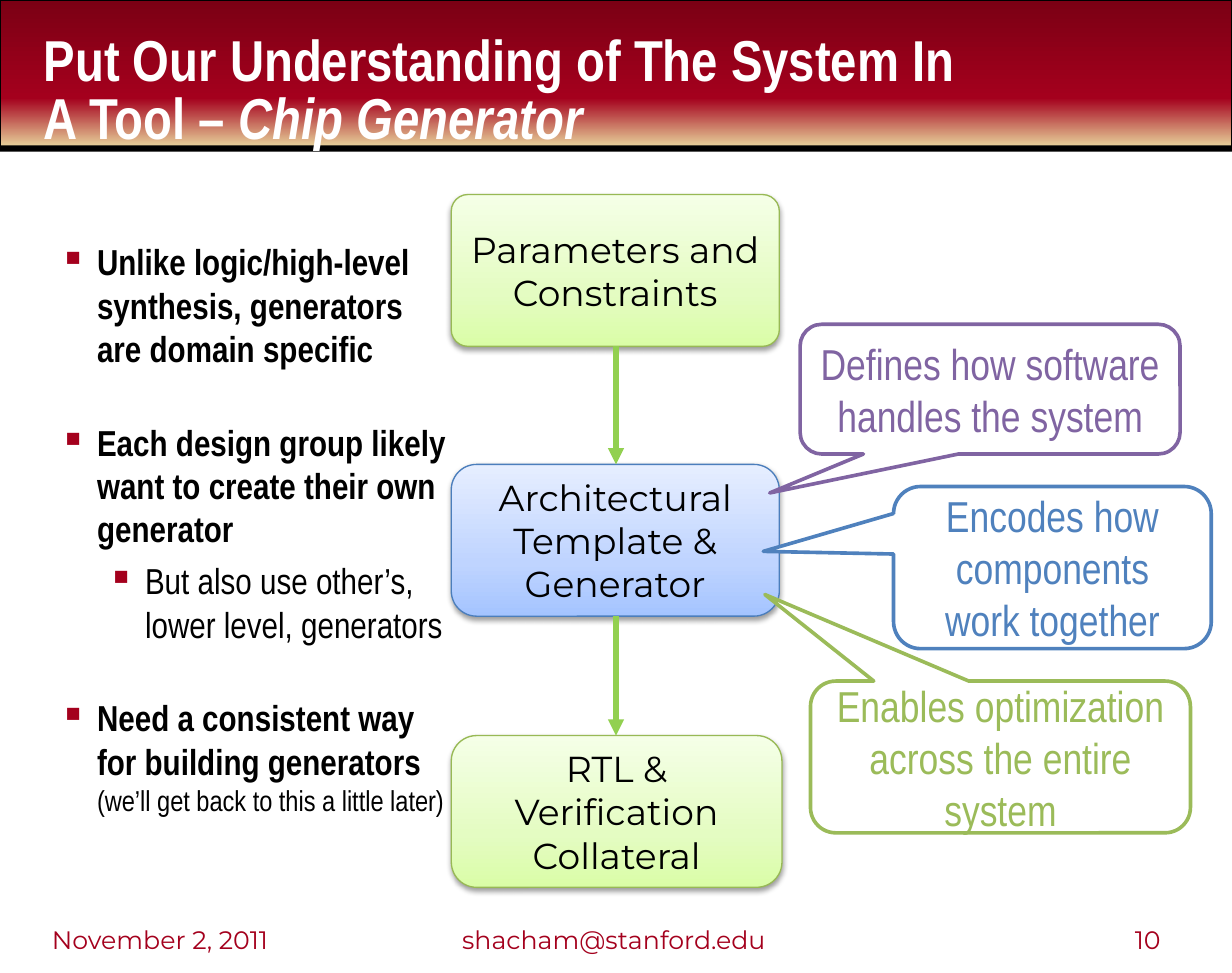
from copy import deepcopy
from dataclasses import dataclass

from pptx import Presentation
from pptx.dml.color import RGBColor
from pptx.enum.shapes import MSO_CONNECTOR as Connector, MSO_SHAPE as Shape
from pptx.enum.text import MSO_ANCHOR as Anchor, PP_ALIGN as Align
from pptx.oxml.ns import qn
from pptx.oxml.xmlchemy import OxmlElement as new_element
from pptx.util import Emu, Inches, Pt


@dataclass(frozen=True)
class Theme:
    narrow: str = "Arial Narrow"
    wide: str = "Montserrat"
    black: str = "000000"
    white: str = "FFFFFF"
    crimson: str = "A4001D"
    arrow: str = "92D050"
    purple: str = "8064A2"
    blue: str = "4F81BD"
    olive: str = "9BBB59"
    green_edge: str = "98B955"
    blue_edge: str = "4B7EBC"
    header_stops: tuple = ((0, "7B0014"), (0.67, "A4001D"), (1, "E7D19A"))
    green_stops: tuple = ((0, "DAFDA7"), (0.35, "E4FCC2"), (1, "F5FFE7"))
    blue_stops: tuple = ((0, "A4C4FF"), (0.35, "BFD4FF"), (1, "E6EEFF"))
    title: int = 32
    callout: int = 24
    body: int = 20
    note: int = 16
    footer: int = 14


def add_child(parent, tag, **attributes):
    child = new_element(tag)
    for name, value in attributes.items():
        child.set(name, str(value))
    parent.append(child)
    return child


def add_shadow(effects, blur, distance, angle, opacity):
    shadow = add_child(effects, "a:outerShdw", blurRad=Pt(blur), dist=Pt(distance),
                       dir=angle * 60000, algn="ctr", rotWithShape=0)
    color = add_child(shadow, "a:srgbClr", val="000000")
    add_child(color, "a:alpha", val=opacity * 1000)


class SlideBuilder:
    def __init__(self, page, theme):
        self.page = page
        self.theme = theme

    def style(self, span, font, size, color, bold=False, italic=False):
        span.font.name = font
        span.font.size = Pt(size)
        span.font.bold = bold
        span.font.italic = italic
        span.font.color.rgb = RGBColor.from_string(color)

    def shape(self, kind, place, fill, line=None, width=0.75, angle=90, adjust=()):
        shape = self.page.shapes.add_shape(kind, *map(Inches, place))
        shape.shadow.inherit = False
        for index, value in enumerate(adjust):
            shape.adjustments[index] = value
        if isinstance(fill, str):
            shape.fill.solid()
            shape.fill.fore_color.rgb = RGBColor.from_string(fill)
        else:
            shape.fill.gradient()
            shape.fill.gradient_angle = angle
            stop_list = shape.element.spPr.find(".//" + qn("a:gsLst"))
            stop_list.append(deepcopy(stop_list[0]))
            for stop, (position, color) in zip(shape.fill.gradient_stops, fill):
                stop.position = position
                stop.color.rgb = RGBColor.from_string(color)
        if line:
            shape.line.color.rgb = RGBColor.from_string(line)
            shape.line.width = Pt(width)
        else:
            shape.line.fill.background()
        return shape

    def label(self, shape, text, font, size, color):
        frame = shape.text_frame
        frame.word_wrap = True
        frame.vertical_anchor = Anchor.MIDDLE
        frame.text = text
        para = frame.paragraphs[0]
        para.alignment = Align.CENTER
        self.style(para.runs[0], font, size, color)
        return frame

    def stage(self, place, text, fill, edge, corner):
        shape = self.shape(Shape.ROUNDED_RECTANGLE, place, fill, edge, adjust=(corner,))
        add_shadow(shape.element.spPr.find(qn("a:effectLst")), 3.1, 1.6, 90, 38)
        frame = self.label(shape, text, self.theme.wide, self.theme.body, self.theme.black)
        frame.margin_left = frame.margin_right = Inches(0.05)

    def callout(self, place, text, color, pointer):
        shape = self.shape(Shape.ROUNDED_RECTANGULAR_CALLOUT, place, self.theme.white,
                           color, 2, adjust=(*pointer, 0.167))
        self.label(shape, text, self.theme.narrow, self.theme.callout, color)

    def arrow(self, x, top, bottom):
        link = self.page.shapes.add_connector(
            Connector.STRAIGHT, Inches(x), Inches(top), Inches(x), Inches(bottom))
        link.line.color.rgb = RGBColor.from_string(self.theme.arrow)
        link.line.width = Pt(3)
        add_child(link.line._get_or_add_ln(), "a:tailEnd", type="triangle")
        add_child(link.element.spPr, "a:effectLst")

    def text_box(self, place, anchor, margins):
        box = self.page.shapes.add_textbox(*map(Inches, place))
        frame = box.text_frame
        frame.word_wrap = True
        frame.vertical_anchor = anchor
        frame.margin_left = frame.margin_right = Inches(margins[0])
        frame.margin_top = frame.margin_bottom = Inches(margins[1])
        return frame

    def title(self, place, text, emphasis):
        para = self.text_box(place, Anchor.BOTTOM, (0.1, 0)).paragraphs[0]
        para.text = text
        para.add_run().text = emphasis
        para.line_spacing = 0.85
        for span in para.runs:
            self.style(span, self.theme.narrow, self.theme.title, self.theme.white,
                       True, span.text == emphasis)
            effects = new_element("a:effectLst")
            add_shadow(effects, 3, 3, 45, 60)
            span.font.fill._xPr.find(qn("a:solidFill")).addnext(effects)

    def bullets(self, place, items):
        frame = self.text_box(place, Anchor.TOP, (0.1, 0.05))
        for index, (text, level, gap) in enumerate(items):
            para = frame.paragraphs[0] if index == 0 else frame.add_paragraph()
            para.text = text
            para.level = level
            properties = para._p.get_or_add_pPr()
            properties.set("marL", str(Inches((0.25, 0.62)[level])))
            properties.set("indent", str(Inches(-0.25)))
            bullet_color = add_child(properties, "a:buClr")
            add_child(bullet_color, "a:srgbClr", val=self.theme.crimson)
            add_child(properties, "a:buSzPct", val=135000)
            add_child(properties, "a:buFont", typeface=self.theme.narrow)
            add_child(properties, "a:buChar", char="▪")
            para.space_before = Pt(gap)
            main, *notes = para.runs
            self.style(main, self.theme.narrow, self.theme.body, self.theme.black, level == 0)
            for note in notes:
                self.style(note, self.theme.narrow, self.theme.note, self.theme.black)

    def footer(self, left, width, text, align):
        para = self.text_box((left, 6.98, width, 0.52), Anchor.MIDDLE, (0, 0)).paragraphs[0]
        para.text = text
        para.alignment = align
        self.style(para.runs[0], self.theme.wide, self.theme.footer, self.theme.crimson)


def main():
    deck = Presentation()
    deck.slide_width = Inches(9.5)
    deck.slide_height = Inches(7.5)
    theme = Theme()
    slide = SlideBuilder(deck.slides.add_slide(deck.slide_layouts[6]), theme)

    slide.shape(Shape.RECTANGLE, (0, 0, 9.5, 1.13), theme.header_stops, theme.black, angle=270)
    slide.shape(Shape.RECTANGLE, (0, 1.12, 9.5, 0.05), theme.black)
    slide.title((0.24, 0.11, 7.43, 1.06),
                "Put Our Understanding of The System In A Tool – ", "Chip Generator")
    slide.bullets((0.4, 1.8, 3.18, 4.8), (
        ("Unlike logic/high-level synthesis, generators are domain specific", 0, 0),
        ("Each design group likely want to create their own generator", 0, 28),
        ("But also use other’s, lower level, generators", 1, 5),
        ("Need a consistent way for building generators\v"
         "(we’ll get back to this a little later)", 0, 28),
    ))
    slide.footer(0.4, 2.22, "November 2, 2011", Align.LEFT)
    slide.footer(3.22, 3.03, "shacham@stanford.edu", Align.CENTER)
    slide.footer(6.73, 2.22, "10", Align.RIGHT)

    slide.stage((3.48, 5.67, 2.55, 1.17), "RTL & Verification Collateral",
                theme.green_stops, theme.green_edge, 0.167)
    slide.stage((3.48, 1.5, 2.53, 1.17), "Parameters and Constraints",
                theme.green_stops, theme.green_edge, 0.11)
    slide.stage((3.48, 3.58, 2.53, 1.17), "Architectural Template & Generator",
                theme.blue_stops, theme.blue_edge, 0.167)
    slide.arrow(4.75, 4.75, 5.67)
    slide.arrow(4.75, 2.67, 3.58)

    slide.callout((6.17, 2.5, 2.93, 1), "Defines how software handles the system",
                  theme.purple, (-0.58, 0.8))
    slide.callout((6.89, 3.75, 2.45, 1.25), "Encodes how components work together",
                  theme.blue, (-0.91, -0.1))
    slide.callout((6.25, 5.25, 2.93, 1.17), "Enables optimization across the entire system",
                  theme.olive, (-0.62, -1.07))
    deck.save("out.pptx")


if __name__ == "__main__":
    main()
